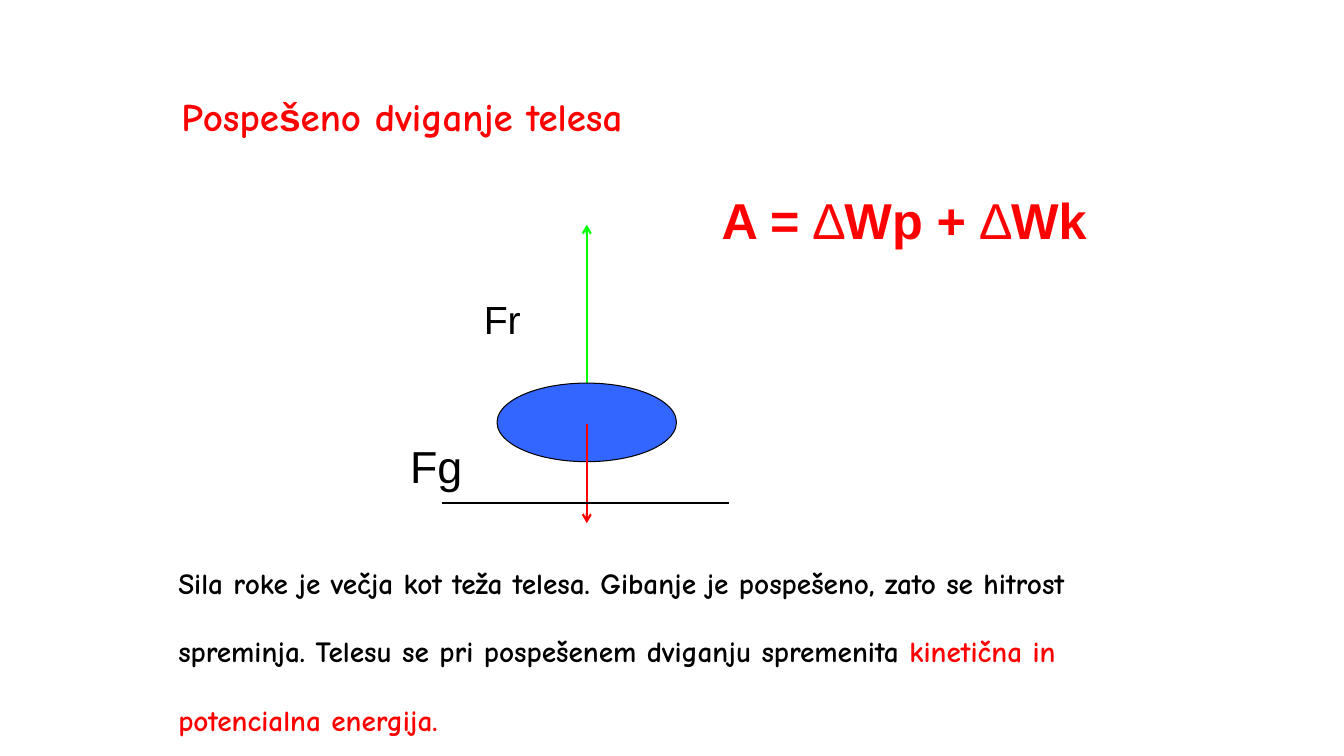
from dataclasses import dataclass

from lxml.etree import SubElement
from pptx import Presentation
from pptx.dml.color import RGBColor
from pptx.enum.shapes import MSO_CONNECTOR, MSO_SHAPE
from pptx.enum.text import MSO_ANCHOR, MSO_AUTO_SIZE
from pptx.oxml.ns import qn
from pptx.util import Inches, Pt


@dataclass(frozen=True)
class Theme:
    red: str = "FF0000"
    green: str = "00FF00"
    blue: str = "3366FF"
    black: str = "000000"
    plain: str = "Arial"
    hand: str = "Comic Neue"
    title: int = 48
    text: int = 36
    weight: int = 32
    pull: int = 28
    thin: float = 0.75
    line: float = 1.5


class SlideBuilder:
    """Places elements by percentages of the slide's width and height."""

    def __init__(self, deck, theme):
        self.deck = deck
        self.theme = theme
        self.slide = deck.slides.add_slide(deck.slide_layouts[6])

    def place(self, *shares):
        sides = (self.deck.slide_width, self.deck.slide_height)
        return [round(sides[i % 2] * share / 100) for i, share in enumerate(shares)]

    def text(self, area, size, runs, wrap=True, grow=True, baseline=0):
        """Each run is (text, colour, font, bold)."""
        frame = self.slide.shapes.add_textbox(*self.place(*area)).text_frame
        frame.word_wrap = wrap
        frame.auto_size = MSO_AUTO_SIZE.SHAPE_TO_FIT_TEXT if grow else MSO_AUTO_SIZE.NONE
        frame.vertical_anchor = MSO_ANCHOR.TOP
        for words, colour, font, bold in runs:
            run = frame.paragraphs[0].add_run()
            run.text = words
            run.font.size = Pt(size)
            run.font.name = font
            run.font.bold = bold
            run.font.color.rgb = RGBColor.from_string(colour)
            if baseline:
                run.font._element.set("baseline", str(baseline * 1000))

    def line(self, start, end, colour, arrow=False):
        line = self.slide.shapes.add_connector(
            MSO_CONNECTOR.STRAIGHT, *self.place(*start, *end))
        line.line.color.rgb = RGBColor.from_string(colour)
        line.line.width = Pt(self.theme.line)
        if arrow:
            SubElement(line.line._get_or_add_ln(), qn("a:tailEnd"), type="arrow")
        SubElement(line._element.spPr, qn("a:effectLst"))

    def ellipse(self, area, fill):
        ellipse = self.slide.shapes.add_shape(MSO_SHAPE.OVAL, *self.place(*area))
        ellipse.shadow.inherit = False
        ellipse.fill.solid()
        ellipse.fill.fore_color.rgb = RGBColor.from_string(fill)
        ellipse.line.color.rgb = RGBColor.from_string(self.theme.black)
        ellipse.line.width = Pt(self.theme.thin)


def main():
    deck = Presentation()
    deck.slide_width, deck.slide_height = Inches(13.33), Inches(7.5)
    theme = Theme()
    page = SlideBuilder(deck, theme)

    # Title
    page.text((12.75, 5.2, 43.59, 36.4), theme.title, [
        ("Pospe", theme.red, theme.hand, True),
        ("š", theme.red, theme.plain, True),
        ("eno dviganje telesa", theme.red, theme.hand, True),
    ], grow=False, baseline=-30)

    # Lifted body with its two forces, above the ground
    axis = 43.66
    body_width = 13.35
    page.line((axis, 54.13), (axis, 29.73), theme.green, arrow=True)
    page.ellipse((axis - body_width / 2, 50.67, body_width, 10.4), theme.blue)
    page.line((axis, 56.13), (axis, 69.2), theme.red, arrow=True)
    page.line((32.86, 66.53), (54.24, 66.53), theme.black)

    # Work and energy formula
    page.text((52.96, 24.4, 34.58, 9.47), theme.text, [
        (part, theme.red, theme.plain, part != "∆")
        for part in ("A = ", "∆", "Wp + ", "∆", "Wk")
    ])

    # Force labels
    for force, area, size in (
        ("Fr", (35.26, 38.4, 4.28, 7.6), theme.pull),
        ("Fg", (29.78, 57.33, 5.4, 8.53), theme.weight),
    ):
        page.text(area, size, [(force, theme.black, theme.plain, False)], wrap=False)

    # Explanation
    page.text((12.53, 69.6, 75.02, 25.6), theme.text, [
        ("Sila roke je večja kot teža telesa. Gibanje je pospešeno, zato se hitrost "
         "spreminja. Telesu se pri pospešenem dviganju spremenita ",
         theme.black, theme.hand, True),
        ("kinetična in potencialna energija.", theme.red, theme.hand, True),
    ], baseline=-25)

    deck.save("out.pptx")


if __name__ == "__main__":
    main()
